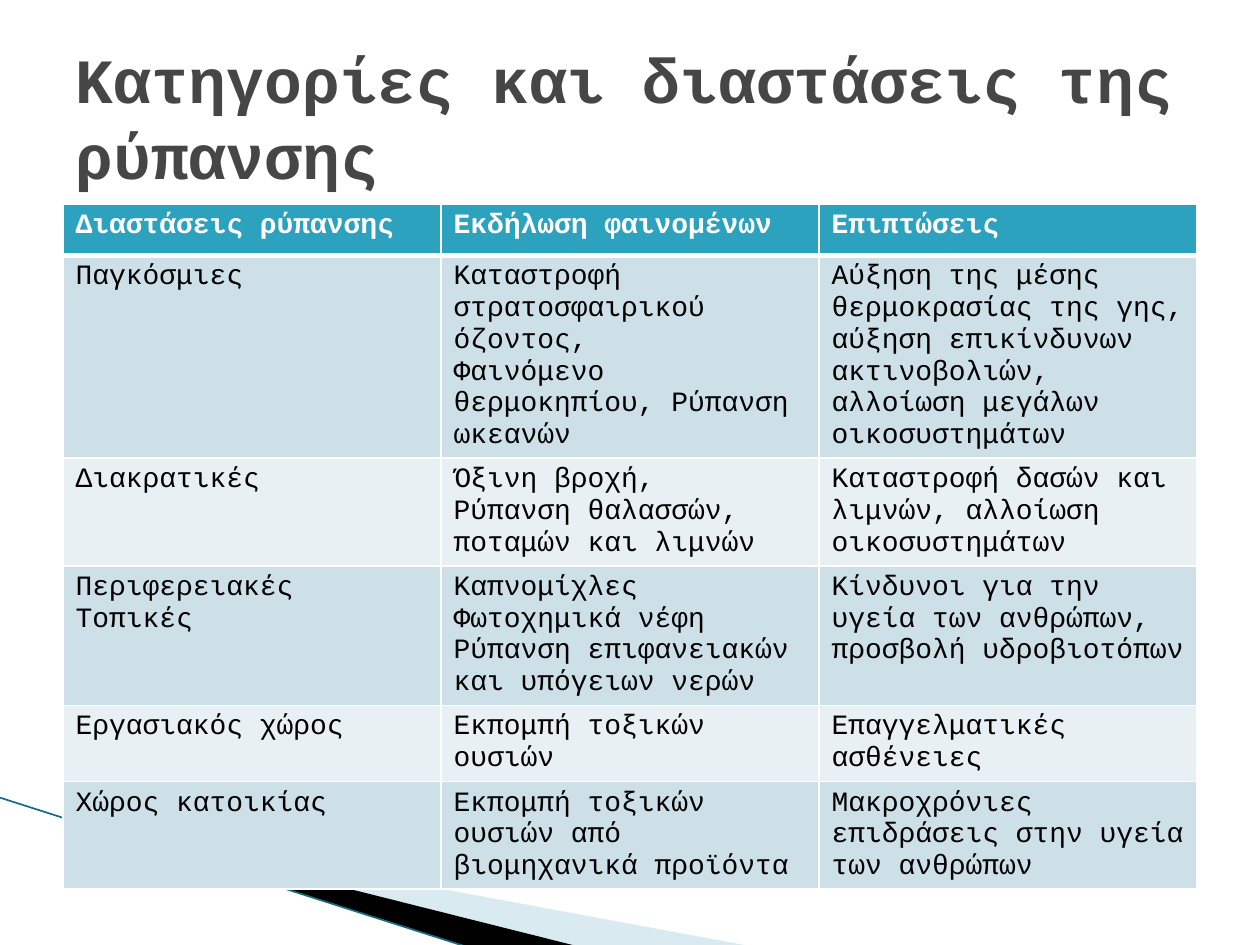
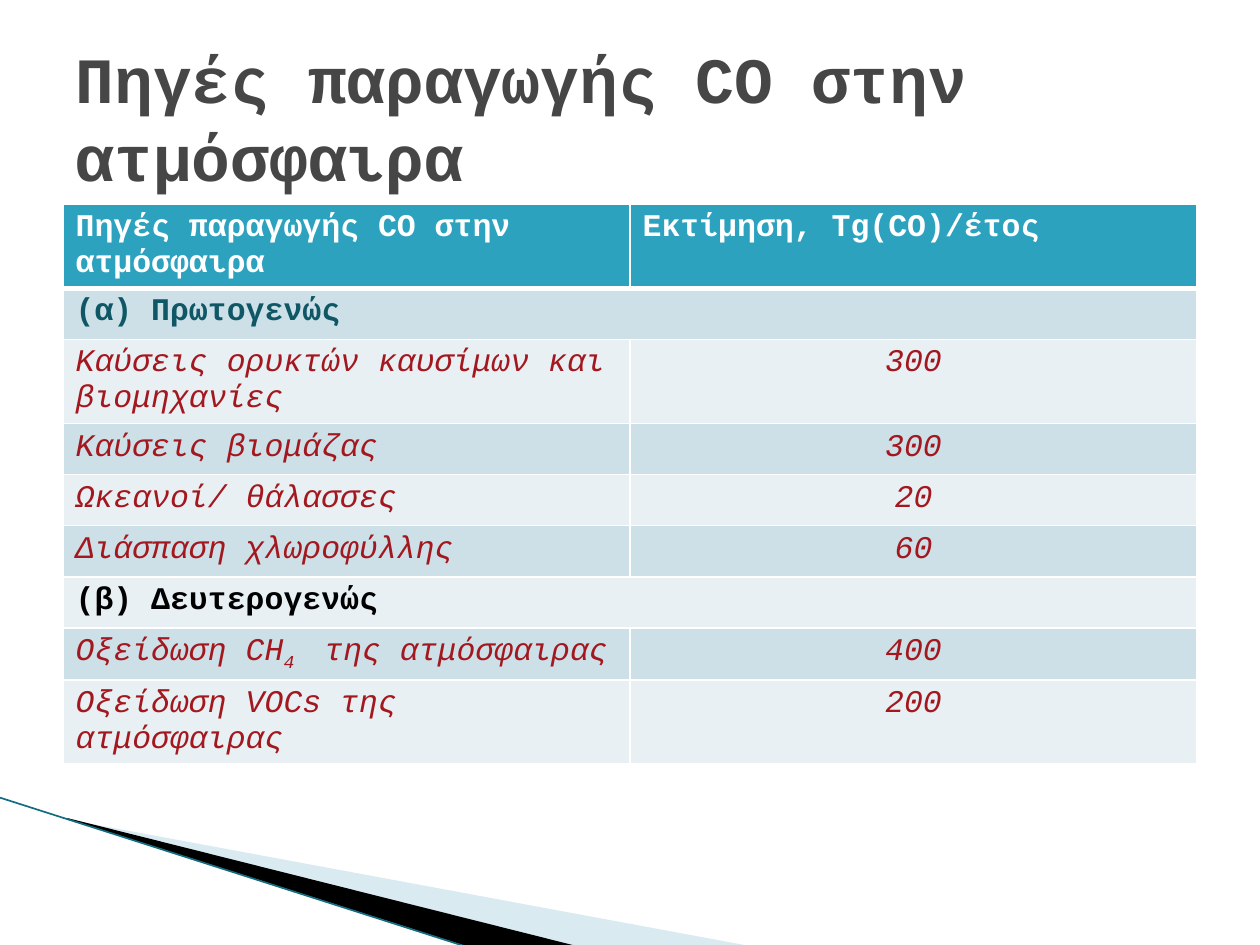
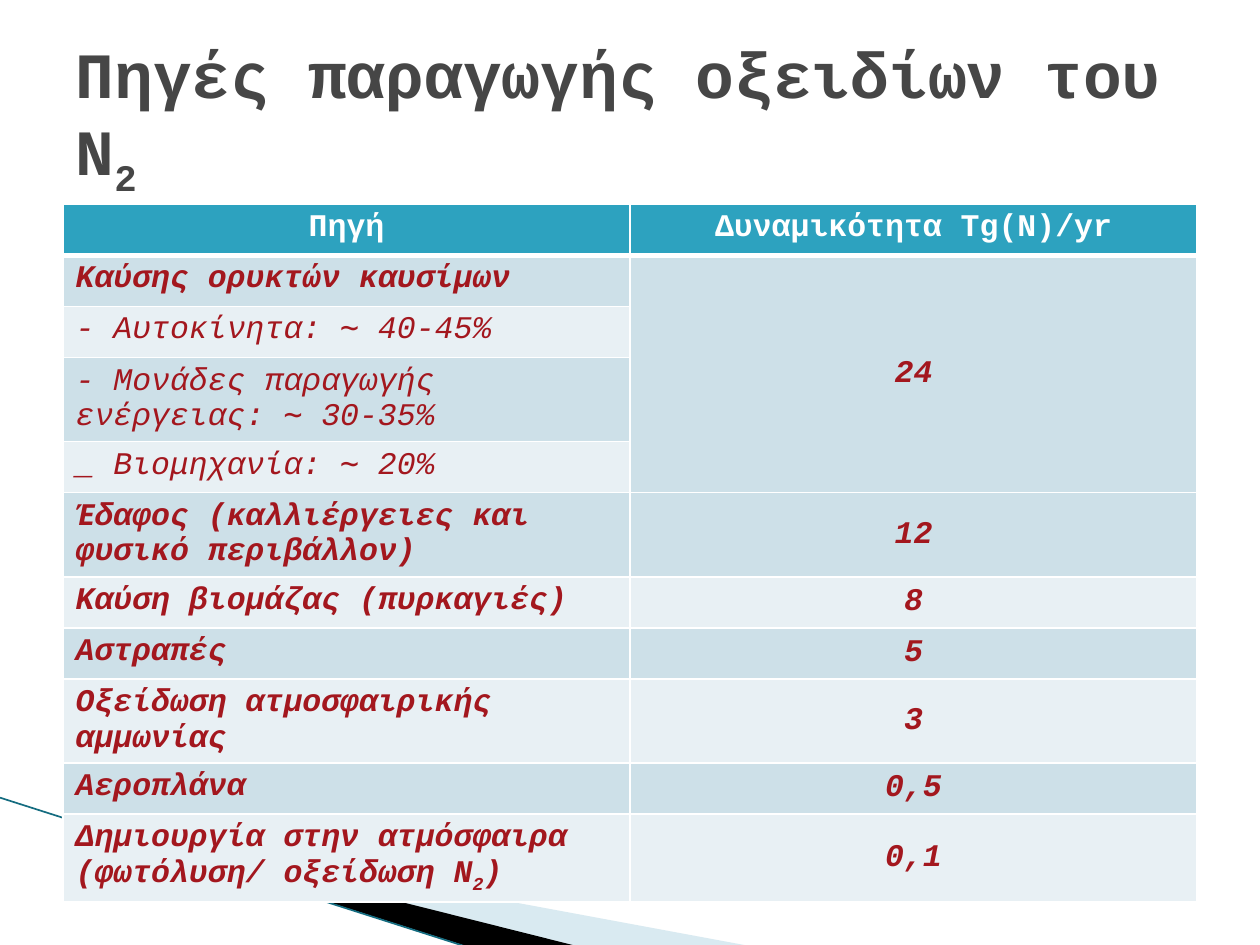
from dataclasses import dataclass

from lxml.etree import SubElement
from pptx import Presentation
from pptx.dml.color import RGBColor
from pptx.enum.text import MSO_ANCHOR, MSO_AUTO_SIZE, PP_ALIGN
from pptx.enum.shapes import MSO_CONNECTOR
from pptx.oxml.ns import qn
from pptx.util import Pt

FONT = "Courier New"
WHITE = RGBColor(0xFF, 0xFF, 0xFF)
BLACK = RGBColor(0x00, 0x00, 0x00)
GREY = RGBColor(0x46, 0x46, 0x46)
TEAL = RGBColor(0x2D, 0xA2, 0xBF)
DARK_TEAL = RGBColor(0x10, 0x57, 0x66)
LINE_TEAL = RGBColor(0x14, 0x6C, 0x80)
PALE_BLUE = RGBColor(0xA0, 0xCB, 0xDC)
RED = RGBColor(0xA3, 0x17, 0x1E)
BANDS = (RGBColor(0xCD, 0xE0, 0xE8), RGBColor(0xE8, 0xF0, 0xF4))

MARGIN, WIDTH = 36, 648
TITLE_TOP, TITLE_HEIGHT = 21.6, 90
TABLE_TOP, ROW_HEIGHT = 116.7, 29.2
THIN, THICK = 1, 3


@dataclass(frozen=True)
class Style:
    color: RGBColor
    bold: bool = False
    italic: bool = False


HEADER = Style(WHITE, bold=True)
PLAIN = Style(BLACK)
GROUP_TEAL = Style(DARK_TEAL, bold=True)
GROUP_BLACK = Style(BLACK, bold=True)
SOURCE = Style(RED, italic=True)
MAIN_SOURCE = Style(RED, bold=True, italic=True)


@dataclass(frozen=True)
class Row:
    """One table row; a text may hold line breaks and |subscripts|."""
    style: Style
    texts: tuple[str, ...]


@dataclass(frozen=True)
class TableSlide:
    title: str
    title_size: float
    text_size: float
    rows: tuple[Row, ...]
    merges: tuple[tuple[int, int, int, int], ...] = ()
    centered_columns: tuple[int, ...] = ()
    center_header: bool = False
    value_anchor: MSO_ANCHOR = MSO_ANCHOR.TOP


SLIDES = (
    TableSlide(
        "Κατηγορίες και διαστάσεις της ρύπανσης", 36, 16,
        (
            Row(HEADER, ("Διαστάσεις ρύπανσης", "Εκδήλωση φαινομένων", "Επιπτώσεις")),
            Row(PLAIN, (
                "Παγκόσμιες",
                "Καταστροφή στρατοσφαιρικού όζοντος,\nΦαινόμενο θερμοκηπίου, Ρύπανση ωκεανών",
                "Αύξηση της μέσης θερμοκρασίας της γης, αύξηση επικίνδυνων "
                "ακτινοβολιών, αλλοίωση μεγάλων οικοσυστημάτων")),
            Row(PLAIN, (
                "Διακρατικές",
                "Όξινη βροχή,\nΡύπανση θαλασσών, ποταμών και λιμνών",
                "Καταστροφή δασών και λιμνών, αλλοίωση οικοσυστημάτων")),
            Row(PLAIN, (
                "Περιφερειακές\nΤοπικές",
                "Καπνομίχλες\nΦωτοχημικά νέφη\nΡύπανση επιφανειακών και υπόγειων νερών",
                "Κίνδυνοι για την υγεία των ανθρώπων, προσβολή υδροβιοτόπων")),
            Row(PLAIN, ("Εργασιακός χώρος", "Εκπομπή τοξικών ουσιών",
                        "Επαγγελματικές ασθένειες")),
            Row(PLAIN, (
                "Χώρος κατοικίας",
                "Εκπομπή τοξικών ουσιών από βιομηχανικά προϊόντα",
                "Μακροχρόνιες επιδράσεις στην υγεία των ανθρώπων")),
        ),
    ),
    TableSlide(
        "Πηγές παραγωγής CO στην ατμόσφαιρα", 36.9, 18,
        (
            Row(HEADER, ("Πηγές παραγωγής CO στην ατμόσφαιρα", "Εκτίμηση, Tg(CO)/έτος")),
            Row(GROUP_TEAL, ("(α) Πρωτογενώς",)),
            Row(SOURCE, ("Καύσεις ορυκτών καυσίμων και βιομηχανίες", "300")),
            Row(SOURCE, ("Καύσεις βιομάζας", "300")),
            Row(SOURCE, ("Ωκεανοί/ θάλασσες", "20")),
            Row(SOURCE, ("Διάσπαση χλωροφύλλης", "60")),
            Row(GROUP_BLACK, ("(β) Δευτερογενώς",)),
            Row(SOURCE, ("Οξείδωση CH|4 | της ατμόσφαιρας", "400")),
            Row(SOURCE, ("Οξείδωση VOCs της ατμόσφαιρας", "200")),
        ),
        merges=((1, 0, 1, 1), (6, 0, 6, 1)),
        centered_columns=(1,),
    ),
    TableSlide(
        "Πηγές παραγωγής οξειδίων του Ν|2|", 36.9, 18,
        (
            Row(HEADER, ("Πηγή", "Δυναμικότητα Τg(N)/yr")),
            Row(MAIN_SOURCE, ("Καύσης ορυκτών καυσίμων", "24")),
            Row(SOURCE, ("- Αυτοκίνητα: ∼ 40-45%",)),
            Row(SOURCE, ("- Μονάδες παραγωγής ενέργειας: ∼ 30-35%",)),
            Row(SOURCE, ("_ Βιομηχανία: ∼ 20%",)),
            Row(MAIN_SOURCE, ("Έδαφος (καλλιέργειες και φυσικό περιβάλλον)", "12")),
            Row(MAIN_SOURCE, ("Καύση βιομάζας (πυρκαγιές)", "8")),
            Row(MAIN_SOURCE, ("Αστραπές", "5")),
            Row(MAIN_SOURCE, ("Οξείδωση ατμοσφαιρικής αμμωνίας", "3")),
            Row(MAIN_SOURCE, ("Αεροπλάνα", "0,5")),
            Row(MAIN_SOURCE, ("Δημιουργία στην ατμόσφαιρα (φωτόλυση/ οξείδωση Ν|2|)", "0,1")),
        ),
        merges=((1, 1, 4, 1),),
        centered_columns=(1,),
        center_header=True,
        value_anchor=MSO_ANCHOR.MIDDLE,
    ),
)


def add_runs(p, text: str, size: float, style: Style) -> None:
    """Add text to a paragraph, with the parts between bars as subscripts."""
    for i, part in enumerate(text.split("|")):
        if not part:
            continue
        r = p.add_run()
        r.text = part
        r.font.name, r.font.size = FONT, Pt(size)
        r.font.bold, r.font.italic = style.bold, style.italic
        r.font.color.rgb = style.color
        if i % 2:
            r.font._element.set("baseline", "-25000")


def add_wedge(s, points: list[tuple[float, float]], color: RGBColor,
              opacity: int = 100) -> None:
    builder = s.shapes.build_freeform(Pt(points[0][0]), Pt(points[0][1]), scale=1.0)
    builder.add_line_segments([(Pt(x), Pt(y)) for x, y in points[1:]], close=True)
    sp = builder.convert_to_shape()
    sp.shadow.inherit = False
    sp.fill.solid()
    sp.fill.fore_color.rgb = color
    sp.line.fill.background()
    if opacity < 100:
        clr = sp._element.spPr.find(".//" + qn("a:srgbClr"))
        SubElement(clr, qn("a:alpha")).set("val", str(opacity * 1000))


def add_corner(s) -> None:
    """Draw the wedges and the line at the lower left."""
    add_wedge(s, [(39.5, 468.5), (428, 540.5), (328, 540.5), (39.5, 468)], PALE_BLUE, 40)
    add_wedge(s, [(38.2, 467.4), (329, 540.5), (267.5, 541), (38.8, 468)], BLACK)
    line = s.shapes.add_connector(MSO_CONNECTOR.STRAIGHT, Pt(-0.7), Pt(455.6),
                                  Pt(267.4), Pt(541.3))
    line.line.color.rgb = LINE_TEAL
    line.line.width = Pt(0.95)
    SubElement(line._element.spPr, qn("a:effectLst"))


def format_title(s, page: TableSlide) -> None:
    title = s.shapes.title
    title.left, title.top = Pt(MARGIN), Pt(TITLE_TOP)
    title.width, title.height = Pt(WIDTH), Pt(TITLE_HEIGHT)
    tf = title.text_frame
    tf.word_wrap, tf.auto_size = True, MSO_AUTO_SIZE.NONE
    tf.vertical_anchor = MSO_ANCHOR.MIDDLE
    p = tf.paragraphs[0]
    p.alignment = PP_ALIGN.LEFT
    add_runs(p, page.title, page.title_size, Style(GREY, bold=True))


def set_borders(cell, top: float, bottom: float) -> None:
    tc_pr = cell._tc.get_or_add_tcPr()
    for side, width in (("L", THIN), ("R", THIN), ("T", top), ("B", bottom)):
        ln = SubElement(tc_pr, qn(f"a:ln{side}"), w=str(Pt(width)))
        fill = SubElement(ln, qn("a:solidFill"))
        SubElement(fill, qn("a:srgbClr"), val=str(WHITE))


def add_data_table(s, page: TableSlide) -> None:
    n_rows, n_cols = len(page.rows), len(page.rows[0].texts)
    table = s.shapes.add_table(n_rows, n_cols, Pt(MARGIN), Pt(TABLE_TOP), Pt(WIDTH),
                               Pt(ROW_HEIGHT * n_rows)).table
    for i, row in enumerate(page.rows):
        table.rows[i].height = Pt(ROW_HEIGHT)
        for j in range(n_cols):
            cell = table.cell(i, j)
            set_borders(cell, THICK if i == 1 else THIN, THICK if i == 0 else THIN)
            cell.fill.solid()
            cell.fill.fore_color.rgb = BANDS[(i - 1) % 2] if i else TEAL
            if j >= len(row.texts):
                continue
            is_value = i > 0 and j in page.centered_columns
            if is_value:
                cell.vertical_anchor = page.value_anchor
            tf = cell.text_frame
            for k, text in enumerate(row.texts[j].split("\n")):
                p = tf.add_paragraph() if k else tf.paragraphs[0]
                if is_value or (i == 0 and page.center_header):
                    p.alignment = PP_ALIGN.CENTER
                add_runs(p, text, page.text_size, row.style)
    for top, left, bottom, right in page.merges:
        table.cell(top, left).merge(table.cell(bottom, right))


def main() -> None:
    prs = Presentation()
    prs.slide_width, prs.slide_height = Pt(720), Pt(540)
    for page in SLIDES:
        s = prs.slides.add_slide(prs.slide_layouts[5])
        add_corner(s)
        format_title(s, page)
        add_data_table(s, page)
    prs.save("out.pptx")


if __name__ == "__main__":
    main()
